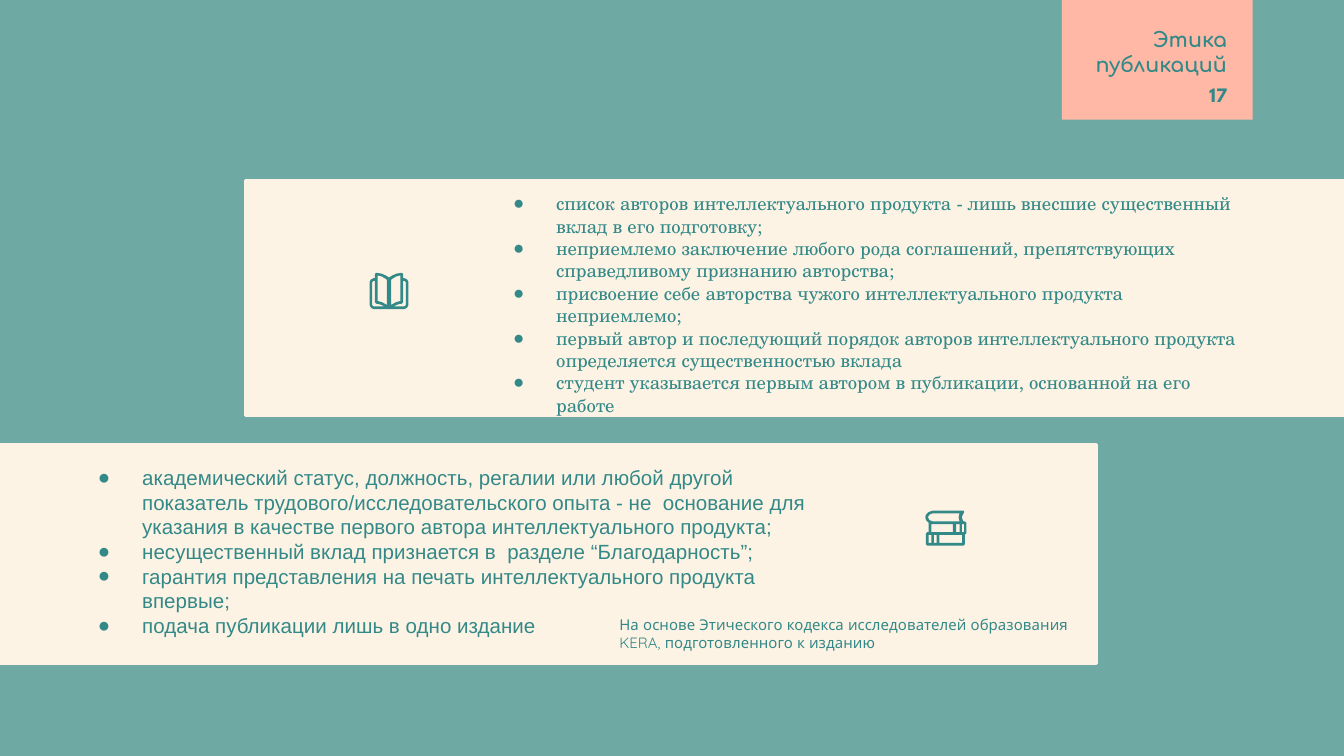
from lxml import etree
from pptx import Presentation
from pptx.dml.color import RGBColor
from pptx.enum.shapes import MSO_SHAPE
from pptx.enum.text import MSO_ANCHOR, PP_ALIGN
from pptx.oxml.ns import qn
from pptx.util import Inches, Pt

RECTANGLE = MSO_SHAPE.RECTANGLE
TOP, BOTTOM = MSO_ANCHOR.TOP, MSO_ANCHOR.BOTTOM
LEFT, RIGHT = PP_ALIGN.LEFT, PP_ALIGN.RIGHT

COLORS = {"teal": "338987", "cream": "FDF3E5", "peach": "FFB8A5"}
SLIDE_WIDTH = 10
SLIDE_HEIGHT = SLIDE_WIDTH * 9 / 16

AUTHORSHIP_RULES = [
    "список авторов интеллектуального продукта - лишь внесшие существенный вклад в его подготовку;",
    "неприемлемо заключение любого рода соглашений, препятствующих справедливому признанию авторства;",
    "присвоение себе авторства чужого интеллектуального продукта неприемлемо;",
    "первый автор и последующий порядок авторов интеллектуального продукта определяется существенностью вклада",
    "студент указывается первым автором в публикации, основанной на его работе",
]
PUBLICATION_RULES = [
    "академический статус, должность, регалии или любой другой показатель трудового/исследовательского "
    "опыта - не  основание для указания в качестве первого автора интеллектуального продукта;",
    "несущественный вклад признается в  разделе “Благодарность”;",
    "гарантия представления на печать интеллектуального продукта впервые;",
    "подача публикации лишь в одно издание",
]
SOURCE_NOTE = "На основе Этического кодекса исследователей образования KERA, подготовленного к изданию"


def color(name):
    return RGBColor.from_string(COLORS[name])


def add_panel(slide, box, fill, outlined=False):
    shape = slide.shapes.add_shape(RECTANGLE, *map(Inches, box))
    shape.shadow.inherit = False
    shape.fill.solid()
    shape.fill.fore_color.rgb = color(fill)
    if outlined:
        shape.line.color.rgb = color(fill)
        shape.line.width = Pt(1.5)
    else:
        shape.line.fill.background()
    return shape


def format_frame(frame, anchor):
    frame.word_wrap = True
    frame.vertical_anchor = anchor
    frame.margin_left = frame.margin_right = Inches(0.1)
    frame.margin_top = frame.margin_bottom = Inches(0.1)


def write(paragraph, text, font, size, align=LEFT, bold=False):
    paragraph.alignment = align
    run = paragraph.add_run()
    run.text = text
    run.font.name = font
    run.font.size = Pt(size)
    run.font.bold = bold
    run.font.color.rgb = color("teal")


def add_text_box(slide, box):
    frame = slide.shapes.add_textbox(*map(Inches, box)).text_frame
    format_frame(frame, TOP)
    return frame


def add_bullets(slide, box, items, font, size, hanging):
    frame = add_text_box(slide, box)
    for index, item in enumerate(items):
        paragraph = frame.add_paragraph() if index else frame.paragraphs[0]
        paragraph.line_spacing = Pt(size * 1.2)
        properties = paragraph._p.get_or_add_pPr()
        properties.set("marL", str(Inches(0.5)))
        properties.set("indent", str(-Inches(hanging)))
        bullet_color = etree.SubElement(properties, qn("a:buClr"))
        etree.SubElement(bullet_color, qn("a:srgbClr"), val=COLORS["teal"])
        etree.SubElement(properties, qn("a:buFont"), typeface="Arial")
        etree.SubElement(properties, qn("a:buChar"), char="●")
        write(paragraph, item, font, size)


def add_icon(slide, left, top, contours):
    """Draw closed contours given in hundredths of an inch; inner ones are holes."""
    scaled = [[(x * 10, y * 10) for x, y in contour] for contour in contours]
    builder = slide.shapes.build_freeform(*scaled[0][0], scale=Inches(0.001))
    for index, contour in enumerate(scaled):
        if index:
            builder.move_to(*contour[0])
        builder.add_line_segments(contour[1:], close=True)
    shape = builder.convert_to_shape(Inches(left), Inches(top))
    shape.shadow.inherit = False
    shape.fill.solid()
    shape.fill.fore_color.rgb = color("teal")
    shape.line.fill.background()


def mirrored(points, width):
    return [(width - x, y) for x, y in reversed(points)]


def add_open_book(slide, left, top):
    width = 29
    half = [(14.5, 3.5), (12, 2), (9, 0.7), (5, 0), (4, 1), (4, 4), (3, 4), (1, 5),
            (0, 7), (0, 24), (1, 26), (3, 27)]
    page = [(6, 2), (9, 2.7), (12, 4.5), (13, 5.3), (13, 24), (9.5, 22), (6, 21)]
    cover = [(4, 6), (4, 22), (5, 23), (8, 23.6), (11, 25), (3, 25), (2, 24), (2, 7), (3, 6)]
    add_icon(slide, left, top, [half + mirrored(half, width), page, mirrored(page, width),
                                cover, mirrored(cover, width)])


def add_book_stack(slide, left, top):
    outline = [(6, 0), (3, 1), (1, 3), (0.5, 5), (1, 7), (3, 9), (3, 16), (2, 16), (1, 17),
               (1, 25), (2, 26), (29, 26), (30, 25), (30, 18), (31, 17), (31, 9), (30, 8),
               (29, 8), (28, 6), (28, 4), (29, 2), (29.5, 1), (29, 0)]
    top_book = [(26, 2), (25.3, 5), (26, 8), (6, 8), (3.5, 7), (2.5, 5), (3.5, 3), (6, 2)]
    windows = [(5, 10, 21, 16), (23.5, 10, 26, 16), (27.7, 10, 29.5, 16),
               (3, 18, 5, 24), (7, 18, 9, 24), (11, 18, 28, 24)]
    pages = [[(x1, y1), (x2, y1), (x2, y2), (x1, y2)] for x1, y1, x2, y2 in windows]
    add_icon(slide, left, top, [outline, top_book] + pages)


def add_backdrop(slide):
    slide.background.fill.solid()
    slide.background.fill.fore_color.rgb = color("teal")
    tint = add_panel(slide, (0, 0, SLIDE_WIDTH, SLIDE_HEIGHT), "cream")
    fill_color = tint.fill._xPr.find(qn("a:solidFill"))[0]
    etree.SubElement(fill_color, qn("a:alpha"), val="30000")


def add_title_tab(slide, left, top, width, height):
    add_panel(slide, (left, top, width, height), "peach")
    title = slide.shapes.title
    title.left, title.top = Inches(left + 0.08), Inches(top + 0.14)
    title.width, title.height = Inches(1.25), Inches(0.53)
    format_frame(title.text_frame, BOTTOM)
    write(title.text_frame.paragraphs[0], "Этика публикаций", "Comfortaa", 11, RIGHT, True)
    # Page number
    number = add_text_box(slide, (left + 0.73, top + 0.52, 0.6, 0.43))
    write(number.paragraphs[0], "17", "League Spartan", 11, RIGHT, True)


def add_authorship_band(slide, left, top, width, height):
    add_panel(slide, (left, top, width, height), "cream", outlined=True)
    add_open_book(slide, left + 0.92, top + 0.69)
    add_bullets(slide, (left + 1.71, top - 0.01, 5.79, height), AUTHORSHIP_RULES,
                "TeX Gyre Schola", 10, 0.32)


def add_publication_band(slide, left, top, width, height):
    add_panel(slide, (left, top, width, height), "cream", outlined=True)
    add_book_stack(slide, left + 6.96, top + 0.49)
    add_bullets(slide, (left + 0.54, top + 0.05, 5.74, 1.44), PUBLICATION_RULES,
                "Arial", 11, 0.33)
    # Source note
    note = add_text_box(slide, (left + 4.59, top + 1.17, 3.78, 0.43))
    write(note.paragraphs[0], SOURCE_NOTE, "Quicksand", 8)


def main():
    presentation = Presentation()
    presentation.slide_width = Inches(SLIDE_WIDTH)
    presentation.slide_height = Inches(SLIDE_HEIGHT)
    slide = presentation.slides.add_slide(presentation.slide_layouts[5])
    add_backdrop(slide)
    add_title_tab(slide, 7.9, 0, 1.42, 0.89)
    add_authorship_band(slide, 1.83, 1.34, 8.34, 1.75)
    add_publication_band(slide, -0.08, 3.31, 8.24, 1.63)
    # The title placeholder comes first by default, so lift it above the panels
    slide.shapes._spTree.append(slide.shapes.title._element)
    presentation.save("out.pptx")


if __name__ == "__main__":
    main()
